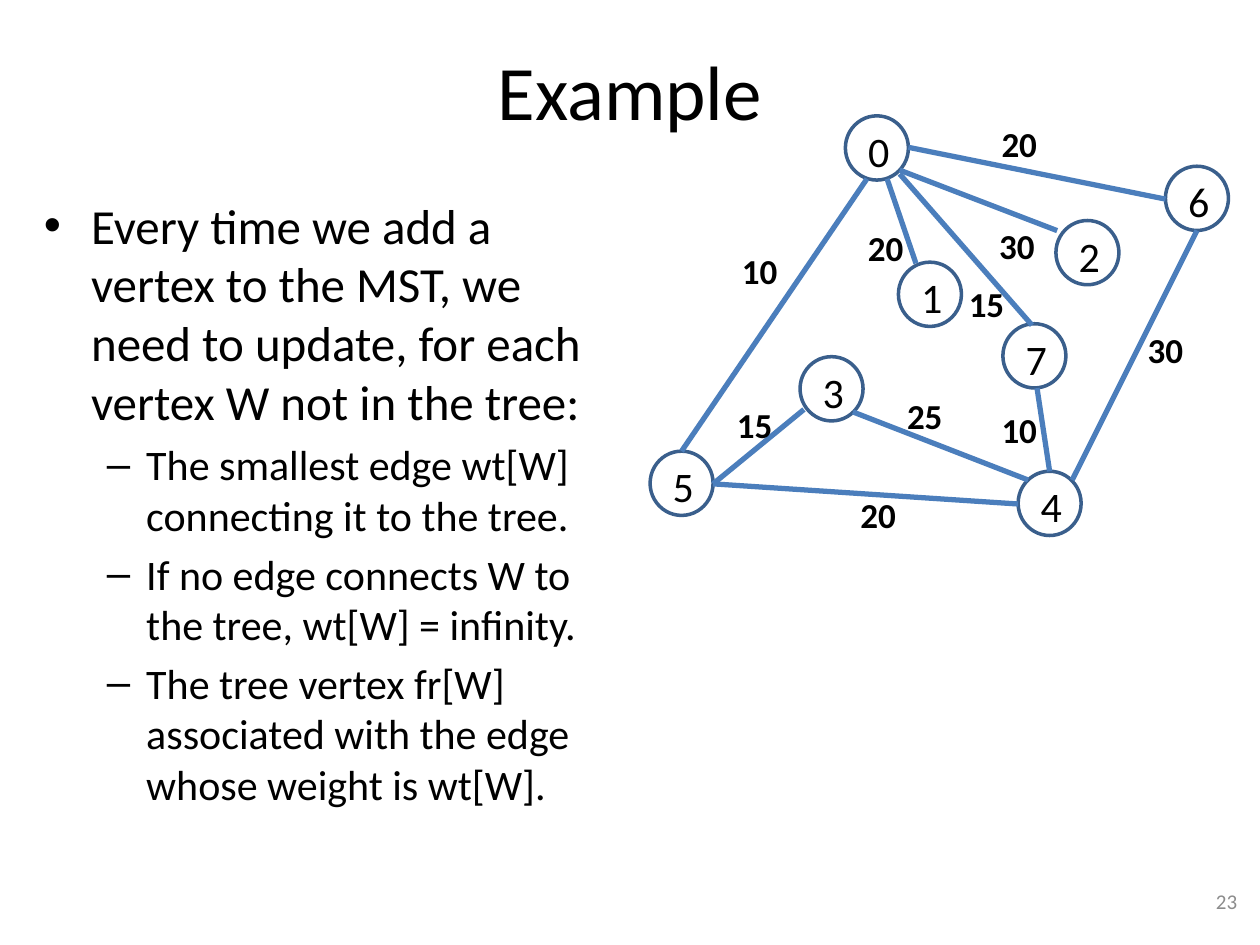
from lxml import etree
from pptx import Presentation
from pptx.dml.color import RGBColor
from pptx.enum.shapes import MSO_CONNECTOR, MSO_SHAPE
from pptx.enum.text import MSO_ANCHOR as Anchor, PP_ALIGN as Align
from pptx.oxml.ns import qn
from pptx.util import Pt

BLACK = RGBColor(0x00, 0x00, 0x00)
GREY = RGBColor(0x8C, 0x8C, 0x8C)
NODE_BLUE = RGBColor(0x3A, 0x5F, 0x8C)
EDGE_BLUE = RGBColor(0x4B, 0x7E, 0xBC)

NODE_WIDTH, NODE_HEIGHT = 36, 36.7

# vertex: left, top
NODES = {
    "0": (483.1, 66.2), "1": (513.4, 149.8), "7": (573.1, 185), "2": (603.4, 126),
    "5": (371.5, 257.8), "3": (457.2, 203.8), "4": (581.8, 269.3), "6": (666, 95),
}

# from x, from y, to x, to y, weight, weight left, weight top
EDGES = [
    (519.1, 84.2, 666, 113.8, "20", 565.2, 66.2),
    (514.1, 97.2, 604.1, 131.8, "30", 563.8, 124.6),
    (506.9, 102.2, 523.4, 150.5, "20", 488.9, 126),
    (495.4, 102.2, 389.5, 257.8, "10", 416.9, 139),
    (514.1, 99.4, 589.7, 185.8, "15", 546.5, 157.7),
    (407.5, 276.5, 459.4, 234, "15", 414, 226.8),
    (407.5, 276.5, 581.8, 288, "20", 484.6, 278.6),
    (487.4, 235.4, 587.5, 274.3, "25", 511.2, 221.8),
    (592.6, 221.8, 599.8, 269.3, "10", 565.2, 229.7),
    (684, 131.8, 612.7, 274.3, "30", 648.7, 184.3),
]

# text, size, left margin, hanging indent, bullet
POINTS = [
    ("Every time we add a vertex to the MST, we need to update, "
     "for each vertex W not in the tree:", 28, 27, 27, "•"),
    ("The smallest edge wt[W] connecting it to the tree.", 24, 58.5, 22.5, "–"),
    ("If no edge connects W to the tree, wt[W] = infinity.", 24, 58.5, 22.5, "–"),
    ("The tree vertex fr[W] associated with the edge whose weight is wt[W].",
     24, 58.5, 22.5, "–"),
]


def write(para, text, **font_values):
    span = para.add_run()
    span.text = text
    color = font_values.pop("color", BLACK)
    for name, value in {"name": "Calibri", **font_values}.items():
        setattr(span.font, name, value)
    span.font.color.rgb = color


def add_box(left, top, width, height, **frame_values):
    box = page.shapes.add_textbox(Pt(left), Pt(top), Pt(width), Pt(height))
    for name, value in {"word_wrap": True, **frame_values}.items():
        setattr(box.text_frame, name, value)
    return box.text_frame


deck = Presentation()
deck.slide_width, deck.slide_height = Pt(720), Pt(540)
page = deck.slides.add_slide(deck.slide_layouts[5])

title = page.shapes.title
for name, value in {"left": 36, "top": 6, "width": 648, "height": 90}.items():
    setattr(title, name, Pt(value))
title.text_frame.vertical_anchor = Anchor.MIDDLE
title_para = title.text_frame.paragraphs[0]
title_para.alignment = Align.CENTER
write(title_para, "Example", size=Pt(44))

body = add_box(18, 108, 324, 396)
for index, (text, size, margin, hanging, bullet) in enumerate(POINTS):
    para = body.add_paragraph() if index else body.paragraphs[0]
    para.space_before = Pt(size * 0.2)
    write(para, text, size=Pt(size))
    properties = para._p.get_or_add_pPr()
    properties.set("marL", str(Pt(margin)))
    properties.set("indent", str(-Pt(hanging)))
    etree.SubElement(properties, qn("a:buFont"), typeface="Arial")
    etree.SubElement(properties, qn("a:buChar"), char=bullet)

number = add_box(546, 500.5, 168, 28.75, vertical_anchor=Anchor.MIDDLE)
number.paragraphs[0].alignment = Align.RIGHT
write(number.paragraphs[0], "23", size=Pt(12), color=GREY)

for vertex, (left, top) in NODES.items():
    node = page.shapes.add_shape(
        MSO_SHAPE.OVAL, Pt(left), Pt(top), Pt(NODE_WIDTH), Pt(NODE_HEIGHT))
    node.shadow.inherit = False
    node.fill.background()
    node.line.color.rgb = NODE_BLUE
    node.line.width = Pt(2)
    frame_values = {
        "margin_left": Pt(2), "margin_right": 0, "margin_top": Pt(3),
        "margin_bottom": 0, "word_wrap": False, "vertical_anchor": Anchor.MIDDLE,
    }
    for name, value in frame_values.items():
        setattr(node.text_frame, name, value)
    node.text_frame.paragraphs[0].alignment = Align.CENTER
    write(node.text_frame.paragraphs[0], vertex, size=Pt(24))

for *ends, weight, left, top in EDGES:
    edge = page.shapes.add_connector(MSO_CONNECTOR.STRAIGHT, *map(Pt, ends))
    edge.line.color.rgb = EDGE_BLUE
    edge.line.width = Pt(3)
    etree.SubElement(edge._element.spPr, qn("a:effectLst"))
    label = add_box(left, top, 35.3, 31.5, word_wrap=False)
    write(label.paragraphs[0], weight, size=Pt(20), bold=True)

deck.save("out.pptx")
